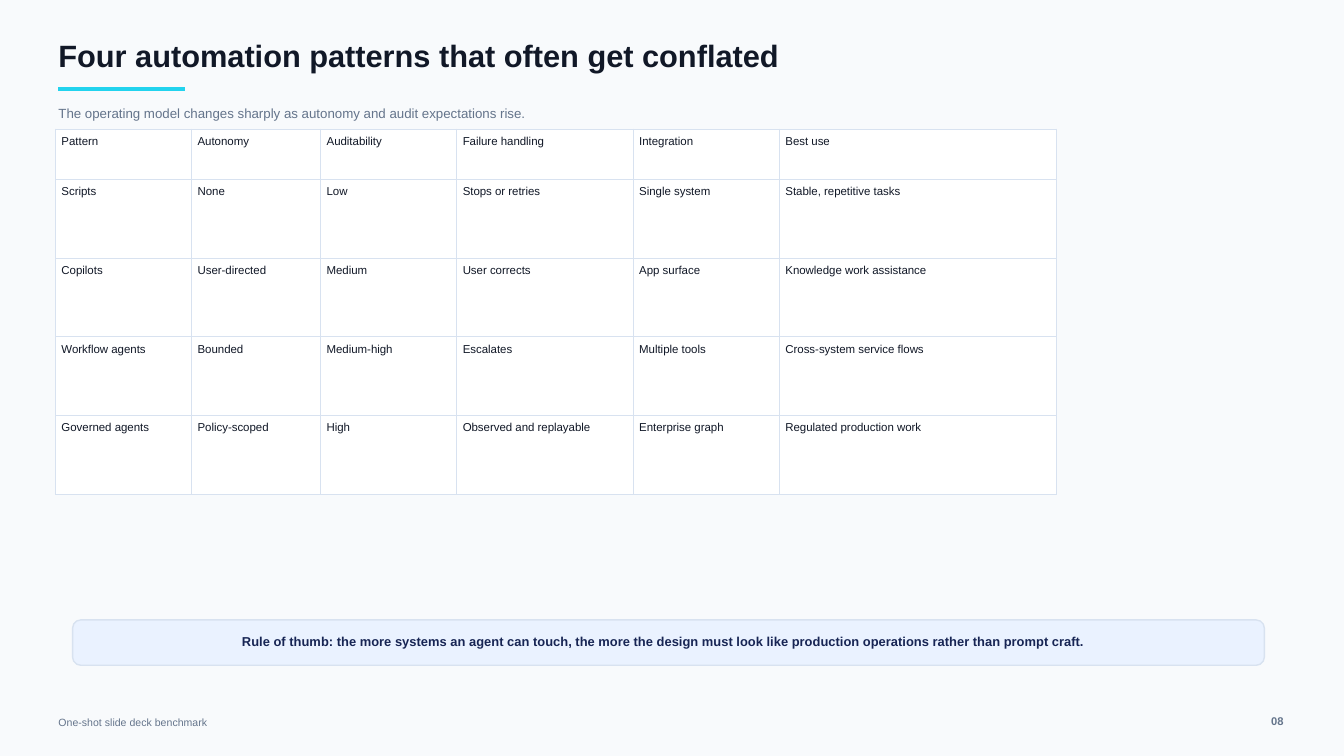
from lxml import etree
from pptx import Presentation
from pptx.dml.color import RGBColor
from pptx.enum.shapes import MSO_CONNECTOR, MSO_SHAPE
from pptx.enum.text import MSO_ANCHOR, PP_ALIGN
from pptx.oxml.ns import qn
from pptx.util import Inches, Pt

LEFT, CENTER, RIGHT = PP_ALIGN.LEFT, PP_ALIGN.CENTER, PP_ALIGN.RIGHT
MIDDLE = MSO_ANCHOR.MIDDLE
STRAIGHT = MSO_CONNECTOR.STRAIGHT
ROUNDED = MSO_SHAPE.ROUNDED_RECTANGLE

BACKGROUND = RGBColor(0xF8, 0xFA, 0xFC)
WHITE = RGBColor(0xFF, 0xFF, 0xFF)
INK = RGBColor(0x11, 0x18, 0x27)
MUTED = RGBColor(0x64, 0x74, 0x8B)
ACCENT = RGBColor(0x22, 0xD3, 0xEE)
BORDER = RGBColor(0xD8, 0xE2, 0xF0)
CALLOUT = RGBColor(0xEA, 0xF2, 0xFF)
NAVY = RGBColor(0x17, 0x25, 0x54)

FONT = "Arial"
GRID_COLUMNS, GRID_ROWS = 26.66, 15
GRID_UNIT = Inches(0.5)
MARGIN = 1.16
CELL_INSET = 0.12
BORDER_WIDTH = Pt(0.6)

COLUMN_SPANS = (2.7, 2.56, 2.7, 3.5, 2.9, 5.5)
HEADER_SPAN, PATTERN_SPAN = 1, 1.56
PATTERNS = (
    ("Pattern", "Autonomy", "Auditability", "Failure handling", "Integration", "Best use"),
    ("Scripts", "None", "Low", "Stops or retries", "Single system", "Stable, repetitive tasks"),
    ("Copilots", "User-directed", "Medium", "User corrects", "App surface",
     "Knowledge work assistance"),
    ("Workflow agents", "Bounded", "Medium-high", "Escalates", "Multiple tools",
     "Cross-system service flows"),
    ("Governed agents", "Policy-scoped", "High", "Observed and replayable", "Enterprise graph",
     "Regulated production work"),
)


def grid(*spans):
    return [round(span * GRID_UNIT) for span in spans]


def write(frame, text, size, color=INK, bold=False, align=LEFT):
    paragraph = frame.paragraphs[0]
    paragraph.alignment = align
    run = paragraph.add_run()
    run.text = text
    run.font.name = FONT
    run.font.size = Pt(size)
    run.font.bold = bold
    run.font.color.rgb = color


def add_label(slide, area, text, **text_format):
    frame = slide.shapes.add_textbox(*grid(*area)).text_frame
    frame.word_wrap = True
    frame.vertical_anchor = MIDDLE
    frame.margin_left = frame.margin_right = 0
    frame.margin_top = frame.margin_bottom = 0
    write(frame, text, **text_format)


def add_rule(slide, left, top, length):
    rule = slide.shapes.add_connector(STRAIGHT, *grid(left, top, left + length, top))
    rule.line.color.rgb = ACCENT
    rule.line.width = Pt(3)
    etree.SubElement(rule._element.spPr, qn("a:effectLst"))


def add_panel(slide, area):
    panel = slide.shapes.add_shape(ROUNDED, *grid(*area))
    panel.adjustments[0] = 0.18
    panel.shadow.inherit = False
    panel.fill.solid()
    panel.fill.fore_color.rgb = CALLOUT
    panel.line.color.rgb = BORDER
    panel.line.width = Pt(1)


def outline(cell):
    properties = cell._tc.get_or_add_tcPr()
    for side in ("a:lnL", "a:lnR", "a:lnT", "a:lnB"):
        edge = etree.SubElement(properties, qn(side), w=str(BORDER_WIDTH))
        fill = etree.SubElement(edge, qn("a:solidFill"))
        etree.SubElement(fill, qn("a:srgbClr"), val=str(BORDER))


def fill_cell(cell, text):
    outline(cell)
    cell.fill.solid()
    cell.fill.fore_color.rgb = WHITE
    inset, = grid(CELL_INSET)
    cell.margin_left = cell.margin_right = inset
    cell.margin_top = cell.margin_bottom = inset
    write(cell.text_frame, text, size=8.2)


def add_pattern_table(slide, left, top):
    row_spans = [HEADER_SPAN] + [PATTERN_SPAN] * (len(PATTERNS) - 1)
    area = grid(left, top, sum(COLUMN_SPANS), sum(row_spans))
    table = slide.shapes.add_table(len(PATTERNS), len(COLUMN_SPANS), *area).table
    table.first_row = table.horz_banding = False
    for column, width in zip(table.columns, grid(*COLUMN_SPANS)):
        column.width = width
    for row, height, texts in zip(table.rows, grid(*row_spans), PATTERNS):
        row.height = height
        for cell, text in zip(row.cells, texts):
            fill_cell(cell, text)


def main():
    deck = Presentation()
    deck.slide_width, deck.slide_height = grid(GRID_COLUMNS, GRID_ROWS)
    slide = deck.slides.add_slide(deck.slide_layouts[6])
    slide.background.fill.solid()
    slide.background.fill.fore_color.rgb = BACKGROUND

    add_label(slide, (MARGIN, 0.7, 17.6, 0.8),
              "Four automation patterns that often get conflated", size=22, bold=True)
    add_rule(slide, MARGIN, 1.76, 2.5)
    add_label(slide, (MARGIN, 1.96, 17, 0.56),
              "The operating model changes sharply as autonomy and audit expectations rise.",
              size=9.5, color=MUTED)
    add_pattern_table(slide, 1.1, 2.56)
    add_panel(slide, (1.44, 12.3, 23.64, 0.9))
    add_label(slide, (1.9, 12.58, 22.5, 0.3),
              "Rule of thumb: the more systems an agent can touch, the more the design "
              "must look like production operations rather than prompt craft.",
              size=9.2, color=NAVY, bold=True, align=CENTER)
    add_label(slide, (MARGIN, 14.16, 6.2, 0.36), "One-shot slide deck benchmark",
              size=7.5, color=MUTED)
    add_label(slide, (24.16, 14.1, 1.3, 0.4), "08",
              size=8, color=MUTED, bold=True, align=RIGHT)
    deck.save("out.pptx")


if __name__ == "__main__":
    main()
